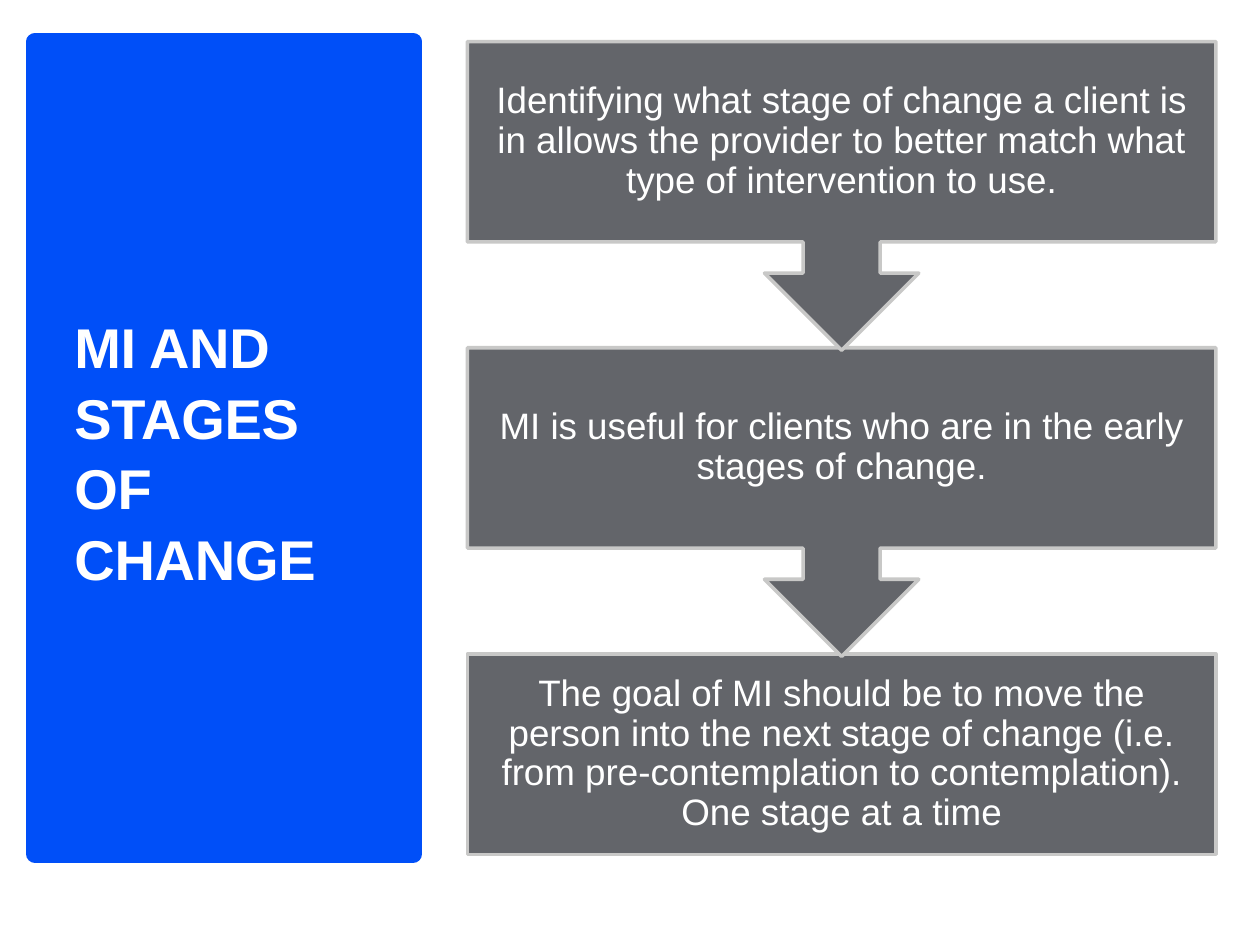
from pptx import Presentation
from pptx import util as u
from pptx.dml.color import RGBColor
from pptx.enum import shapes, text

BLUE = RGBColor(0x00, 0x4F, 0xF8)
GRAY = RGBColor(0x63, 0x65, 0x6A)
EDGE = RGBColor(0xC8, 0xC8, 0xC7)
WHITE = RGBColor(0xFF, 0xFF, 0xFF)

LEFT, TOP, WIDTH = 3.71, 0.33, 5.94
BOX, CALL, STEP = 1.59, 2.45, 2.43
STEPS = [
    "Identifying what stage of change a client is in allows the provider "
    "to better match what type of intervention to use.",
    "MI is useful for clients who are in the early stages of change.",
    "The goal of MI should be to move the person into the next stage of "
    "change (i.e. from pre-contemplation to contemplation). "
    "One stage at a time",
]


def add_box(slide, kind, at, fill, edge, width):
    box = slide.shapes.add_shape(kind, *map(u.Inches, at))
    box.shadow.inherit = False
    box.fill.solid()
    box.fill.fore_color.rgb = fill
    box.line.color.rgb = edge
    box.line.width = u.Pt(width)
    return box


def set_text(shape, words, size, inset, align, pitch, bold=False):
    frame = shape.text_frame
    sides = ("margin_left", "margin_top", "margin_right", "margin_bottom")
    form = dict(zip(sides, map(u.Inches, inset)), word_wrap=True,
                auto_size=text.MSO_AUTO_SIZE.NONE,
                vertical_anchor=text.MSO_ANCHOR.MIDDLE)
    for name, value in form.items():
        setattr(frame, name, value)
    par = frame.paragraphs[0]
    par.alignment, par.line_spacing = align, pitch
    run = par.add_run()
    run.text = words
    font = {"name": "Arial", "size": u.Pt(size), "bold": bold}
    for name, value in font.items():
        setattr(run.font, name, value)
    run.font.color.rgb = WHITE
    return run


def add_title(slide):
    panel = add_box(slide, shapes.MSO_SHAPE.RECTANGLE,
                    (0.28, 0.33, 3, 6.45), BLUE, BLUE, 10)
    title = slide.shapes.title
    # The panel goes behind the title placeholder.
    title._element.addprevious(panel._element)
    at = {"left": 0.49, "top": 0.7, "width": 2.6, "height": 5.75}
    for name, value in at.items():
        setattr(title, name, u.Inches(value))
    run = set_text(title, "MI AND STAGES OF CHANGE", 32,
                   (0.1, 0.05, 0.1, 0.05), text.PP_ALIGN.LEFT, 1.05, True)
    run._r.get_or_add_rPr().set("spc", "-20")


def add_step(slide, index, words):
    """Add one step; every step but the last points down to the next."""
    last = index == len(STEPS) - 1
    kind = shapes.MSO_SHAPE.DOWN_ARROW_CALLOUT
    if last:
        kind = shapes.MSO_SHAPE.RECTANGLE
    at = (LEFT, TOP + index * STEP, WIDTH, BOX if last else CALL)
    box = add_box(slide, kind, at, GRAY, EDGE, 2)
    if not last:
        box.adjustments[3] = BOX / CALL
    set_text(box, words, 21, (0.16,) * 4, text.PP_ALIGN.CENTER, 0.9)


def main():
    deck = Presentation()
    deck.slide_width, deck.slide_height = u.Inches(10), u.Inches(7.5)
    slide = deck.slides.add_slide(deck.slide_layouts[5])
    add_title(slide)
    # From the bottom up, so each arrow tip lies over the next box.
    for index, words in reversed(list(enumerate(STEPS))):
        add_step(slide, index, words)
    deck.save("out.pptx")


if __name__ == "__main__":
    main()
